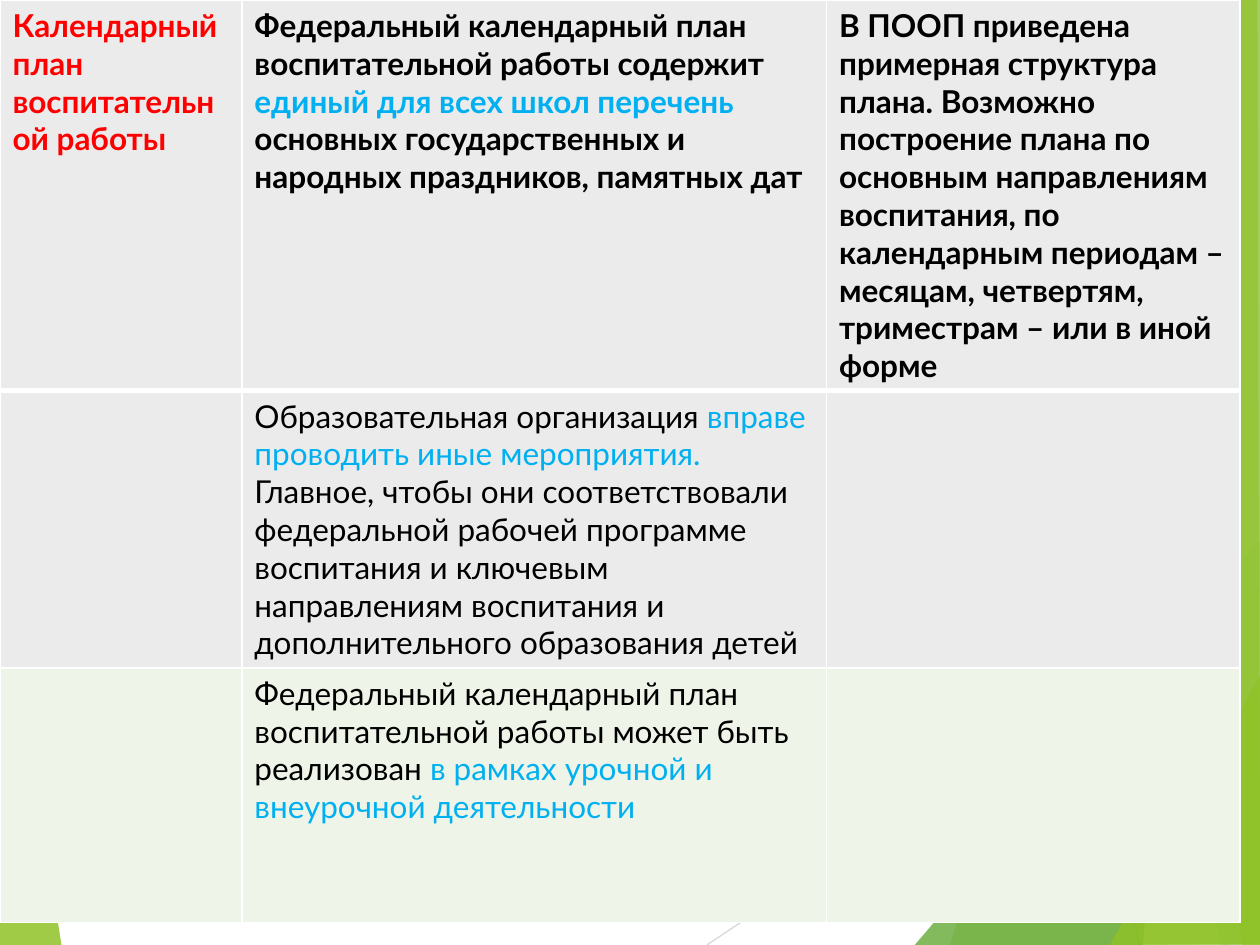
from lxml import etree
from pptx import Presentation
from pptx.dml.color import RGBColor
from pptx.enum.shapes import MSO_CONNECTOR
from pptx.oxml.ns import qn
from pptx.util import Inches, Pt

LINE = MSO_CONNECTOR.STRAIGHT
BLACK, RED, BLUE = "000000", "FF0000", "00B0F0"
GREY, PALE, WHITE = "EBEBEB", "EEF4E8", "FFFFFF"


def paint(fill, color, alpha=100):
    fill.solid()
    fill.fore_color.rgb = RGBColor.from_string(color)
    if alpha < 100:
        clr = fill._xPr.find(qn("a:solidFill"))[0]
        etree.SubElement(clr, qn("a:alpha"), val=str(alpha * 1000))


def edge(cell, side, width):
    props = cell._tc.get_or_add_tcPr()
    line = etree.SubElement(props, qn("a:ln" + side), w=str(Pt(width)))
    fill = etree.SubElement(line, qn("a:solidFill"))
    etree.SubElement(fill, qn("a:srgbClr"), val=WHITE)


prs = Presentation()
prs.slide_width, prs.slide_height = Inches(10), Inches(7.5)
slide = prs.slides.add_slide(prs.slide_layouts[6])
shapes = slide.shapes

rays = [
    ("D9D9D9", 5.61, 7.5, 10.01, 4.57),
    ("BFBFBF", 7.7, 0, 9.04, 7.5),
]
facets = [
    ("90C226", 85, [(-0.01, 4.39), (0.49, 7.51), (-0.01, 7.5)]),
    ("90C226", 30, [(9.75, 0), (7.54, 7.5), (10.02, 7.51), (10.01, 0.01)]),
    ("90C226", 20, [(7.88, -0.01), (9.19, 7.5), (10.01, 7.5), (10.01, -0.01)]),
    ("54A021", 72, [(7.26, 7.5), (10, 4.29), (10.01, 7.5)]),
    ("3F7819", 70, [(7.67, -0.01), (9.7, 7.5), (10.01, 7.49), (10.01, -0.01)]),
    ("C0E474", 70, [(9.81, -0.01), (9.07, 7.5), (10.01, 7.5), (10, -0.01)]),
    ("90C226", 65, [(8.83, -0.01), (9.86, 7.5), (10, 7.5), (9.98, -0.01)]),
    ("90C226", 80, [(8.81, 7.5), (10.01, 5.35), (10.01, 7.49)]),
]

for index, (color, alpha, points) in enumerate(facets):
    spots = [(Inches(x), Inches(y)) for x, y in points]
    pen = shapes.build_freeform(*spots[0])
    pen.add_line_segments(spots[1:], close=True)
    facet = pen.convert_to_shape()
    facet.shadow.inherit = False
    facet.line.fill.background()
    paint(facet.fill, color, alpha)
    if index == 0:
        for shade, *ends in rays:
            ray = shapes.add_connector(LINE, *[Inches(end) for end in ends])
            ray.line.width = Pt(0.75)
            paint(ray.line.fill, shade)
            etree.SubElement(ray._element.spPr, qn("a:effectLst"))

rows = [
    (2.98, GREY, [
        [("Календарный план воспитательной работы", RED)],
        [("Федеральный календарный план воспитательной работы содержит ", BLACK),
         ("единый для всех школ перечень ", BLUE),
         ("основных государственных и народных праздников, памятных дат", BLACK)],
        [("В ПООП приведена примерная структура плана. Возможно построение плана "
          "по основным направлениям воспитания, по календарным периодам – месяцам, "
          "четвертям, триместрам – или в иной форме", BLACK)],
    ]),
    (2.11, GREY, [
        [],
        [("Образовательная организация ", BLACK),
         ("вправе проводить иные мероприятия. ", BLUE),
         ("Главное, чтобы они соответствовали федеральной рабочей программе "
          "воспитания и ключевым направлениям воспитания и дополнительного "
          "образования детей", BLACK)],
        [],
    ]),
    (2.02, PALE, [
        [],
        [("Федеральный календарный план воспитательной работы может быть "
          "реализован ", BLACK),
         ("в рамках урочной и внеурочной деятельности", BLUE)],
        [],
    ]),
]
widths = [1.92, 4.64, 3.28]
frame = shapes.add_table(3, 3, 0, 0, Inches(sum(widths)), Inches(7.11))
table = frame.table
for column, width in zip(table.columns, widths):
    column.width = Inches(width)

for r, (height, shade, texts) in enumerate(rows):
    table.rows[r].height = Inches(height)
    for c, parts in enumerate(texts):
        cell = table.cell(r, c)
        for side in "LRTB":
            thick = (r, side) in [(0, "B"), (1, "T")]
            edge(cell, side, 3 if thick else 1)
        paint(cell.fill, shade)
        para = cell.text_frame.paragraphs[0]
        for text, color in parts:
            run = para.add_run()
            run.text = text
            run.font.name = "Lato"
            run.font.size = Pt(18)
            run.font.bold = r == 0
            paint(run.font.fill, color)

prs.save("out.pptx")
